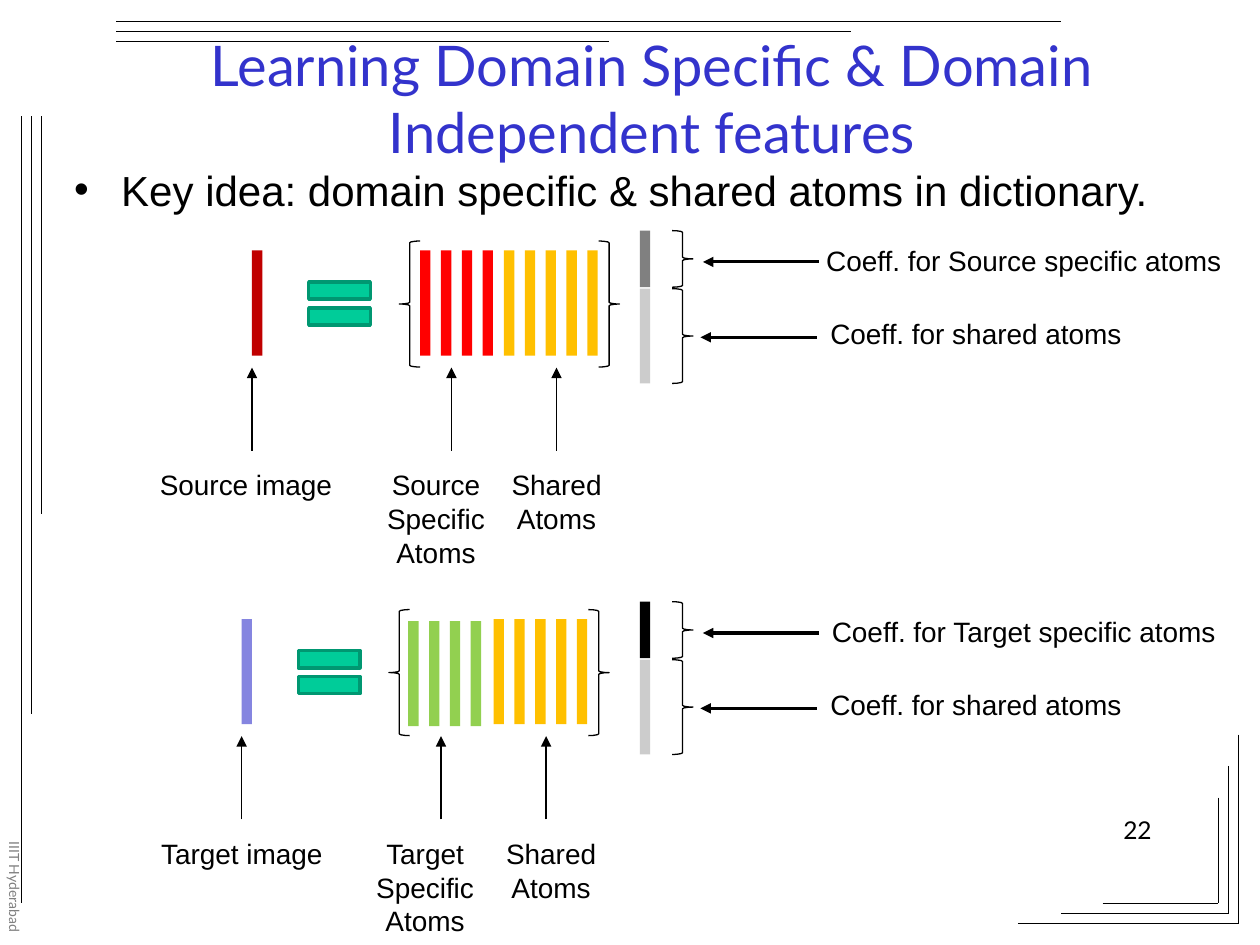
from lxml.etree import SubElement
from pptx import Presentation
from pptx.dml.color import RGBColor
from pptx.enum.shapes import MSO_CONNECTOR as Connector, MSO_SHAPE as Shape
from pptx.enum.text import MSO_ANCHOR as Anchor, MSO_AUTO_SIZE as AutoSize, PP_ALIGN as Align
from pptx.oxml.ns import qn
from pptx.util import Cm, Pt

BLACK, GREY, LIGHT_GREY = "000000", "808080", "CCCCCC"
TITLE_BLUE, GREEN, DARK_GREEN = "3333CC", "00CC99", "009771"
AMBER = "FFC000"
BAR_WIDTH, BAR_HEIGHT, BAR_PITCH = 0.21, 2.12, 0.42
BRACE_WIDTH = 0.42


def color(hex_string):
    return RGBColor.from_string(hex_string)


def write(text_frame, text, font="Arial", size=16, fill=BLACK, align=Align.CENTER,
          anchor=Anchor.TOP, bullet_indent=None):
    text_frame.word_wrap = True
    text_frame.auto_size = AutoSize.NONE
    text_frame.vertical_anchor = anchor
    text_frame.text = text
    paragraph = text_frame.paragraphs[0]
    if bullet_indent:
        properties = paragraph._p.get_or_add_pPr()
        properties.set("marL", str(Cm(bullet_indent)))
        properties.set("indent", str(-Cm(bullet_indent)))
        SubElement(properties, qn("a:buChar")).set("char", "•")
    paragraph.alignment = align
    paragraph.space_before = Pt(0)
    paragraph.font.name = font
    paragraph.font.size = Pt(size)
    paragraph.font.color.rgb = color(fill)


class Diagram:
    """Holds the current slide and draws every element in one style; lengths in cm."""

    def __init__(self, slide):
        self.slide = slide
        self.shapes = slide.shapes

    def placeholder(self, index, x, y, width, height, text, **style):
        shape = self.slide.placeholders[index]
        shape.left, shape.top, shape.width, shape.height = map(Cm, (x, y, width, height))
        write(shape.text_frame, text, **style)

    def label(self, x, y, width, height, text, **style):
        box = self.shapes.add_textbox(*map(Cm, (x, y, width, height)))
        write(box.text_frame, text, **style)
        return box

    def shape(self, kind, x, y, width, height, fill=None, line=None, weight=0.75):
        shape = self.shapes.add_shape(kind, *map(Cm, (x, y, width, height)))
        shape.shadow.inherit = False
        if fill:
            shape.fill.solid()
            shape.fill.fore_color.rgb = color(fill)
        else:
            shape.fill.background()
        if line:
            shape.line.color.rgb = color(line)
            shape.line.width = Pt(weight)
        else:
            shape.line.fill.background()

    def bars(self, x, y, count, fill):
        for index in range(count):
            self.shape(Shape.RECTANGLE, x + index * BAR_PITCH, y, BAR_WIDTH, BAR_HEIGHT, fill)

    def brace(self, kind, x, y, height):
        self.shape(kind, x, y, BRACE_WIDTH, height, line=BLACK)

    def line(self, x1, y1, x2, y2, weight=0.75, arrow=False):
        connector = self.shapes.add_connector(Connector.STRAIGHT, *map(Cm, (x1, y1, x2, y2)))
        connector.line.color.rgb = color(BLACK)
        connector.line.width = Pt(weight)
        if arrow:
            SubElement(connector.line._get_or_add_ln(), qn("a:tailEnd")).set("type", "triangle")
        SubElement(connector._element.spPr, qn("a:effectLst"))

    def frame(self):
        """Stepped triple lines along the top, left and lower right edges."""
        for offset, right, bottom in ((0.43, 21.39, 18.21), (0.64, 17.15, 14.4),
                                      (0.84, 12.27, 10.36)):
            self.line(2.34, offset, right, offset)
            self.line(offset, 2.34, offset, bottom)
        for left, top, right, bottom in ((20.52, 14.81, 24.97, 18.62),
                                         (21.39, 15.44, 24.77, 18.42),
                                         (22.23, 16.08, 24.56, 18.21)):
            self.line(left, bottom, right, bottom)
            self.line(right, top, right, bottom)

    def dictionary(self, x, y, image_fill, atoms_fill, atoms_x, atoms_y, captions):
        """Image bar, equals sign and bracketed atoms; (x, y) is the image bar's corner."""
        self.shape(Shape.MATH_EQUAL, x + 0.92, y + 0.33, 1.69, 1.48, GREEN, DARK_GREEN, 2)
        self.bars(x, y, 1, image_fill)
        self.bars(atoms_x, atoms_y, 4, atoms_fill)
        self.bars(x + 5.08, y, 5, AMBER)
        self.brace(Shape.LEFT_BRACE, x + 2.97, y - 0.19, 2.54)
        self.brace(Shape.RIGHT_BRACE, x + 6.99, y - 0.19, 2.54)
        for offset in (0, 4.02, 6.14):
            self.line(x + offset, y + 4.04, x + offset, y + 2.36, weight=1, arrow=True)
        for left, width, height, text in captions:
            self.label(left, y + 4.26, width, height, text)

    def coefficients(self, y, specific_fill, caption):
        """Two-part coefficient column with braces, arrows and labels."""
        parts = (
            (0, 1.14, specific_fill, 14.17, 0.63, 15.98, 0.13, 9.32, caption),
            (1.17, 1.91, LIGHT_GREY, 14.12, 2.15, 15.14, 1.6, 9.07, "Coeff. for shared atoms"),
        )
        for top, height, fill, tip, arrow_y, left, label_y, width, text in parts:
            self.shape(Shape.RECTANGLE, 12.9, y + top, BAR_WIDTH, height, fill)
            self.brace(Shape.RIGHT_BRACE, 13.55, y + top, height)
            self.line(tip + 2.34, y + arrow_y, tip, y + arrow_y, weight=1.75, arrow=True)
            self.label(left, y + label_y, width, 0.94, text)


def main():
    presentation = Presentation()
    presentation.slide_width, presentation.slide_height = Cm(25.4), Cm(19.05)
    diagram = Diagram(presentation.slides.add_slide(presentation.slide_layouts[1]))

    diagram.frame()
    side_label = diagram.label(-0.25, 16.71, 0.84, 2.34, "IIIT Hyderabad",
                               font="Lato", size=8, fill=GREY, align=Align.LEFT)
    side_label.text_frame._txBody.bodyPr.set("vert", "eaVert")
    diagram.placeholder(0, 1.88, 0.64, 22.53, 2.67,
                        "Learning Domain Specific & Domain Independent features",
                        font="Lato", size=32, fill=TITLE_BLUE, anchor=Anchor.MIDDLE)
    diagram.placeholder(1, 1.24, 3.18, 22.53, 3.18,
                        "Key idea: domain specific & shared atoms in dictionary.",
                        size=24, align=Align.LEFT, bullet_indent=0.95)
    diagram.label(18.21, 16.31, 5.26, 1.24, "22", font="Lato", size=14, align=Align.RIGHT)

    diagram.dictionary(5.08, 5.05, "C00000", "FF0000", 8.47, 5.05, (
        (2.51, 4.9, 0.94, "Source image"),
        (7.2, 3.18, 2.31, "Source Specific Atoms"),
        (9.74, 2.96, 1.63, "Shared Atoms")))
    diagram.dictionary(4.87, 12.48, "8585E0", "92D050", 8.23, 12.52, (
        (2.97, 3.81, 0.94, "Target image"),
        (6.98, 3.18, 2.31, "Target Specific Atoms"),
        (9.1, 4.02, 1.63, "Shared Atoms")))
    diagram.coefficients(4.65, GREY, "Coeff. for Source specific atoms")
    diagram.coefficients(12.13, BLACK, "Coeff. for Target specific atoms")

    presentation.save("out.pptx")


if __name__ == "__main__":
    main()
